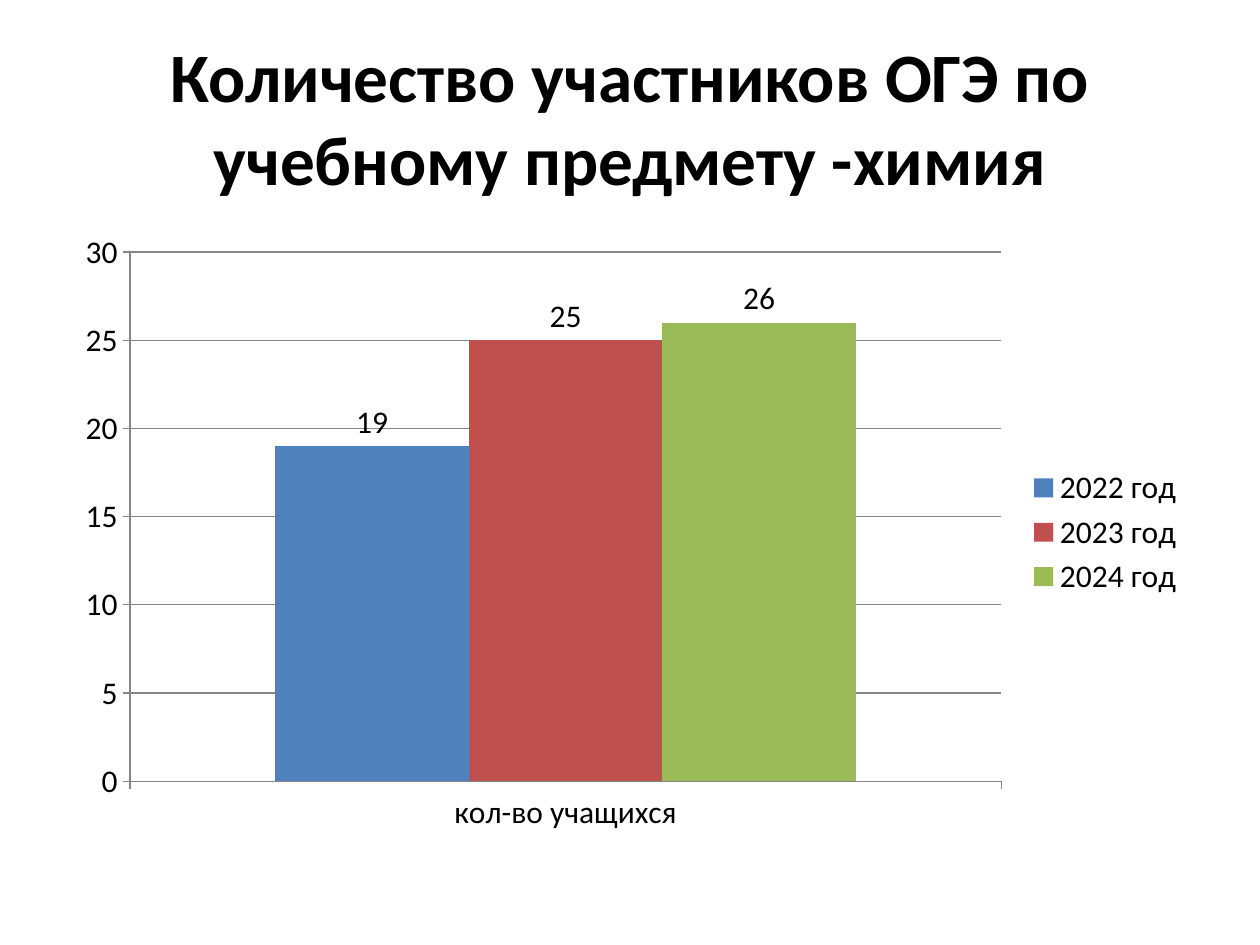
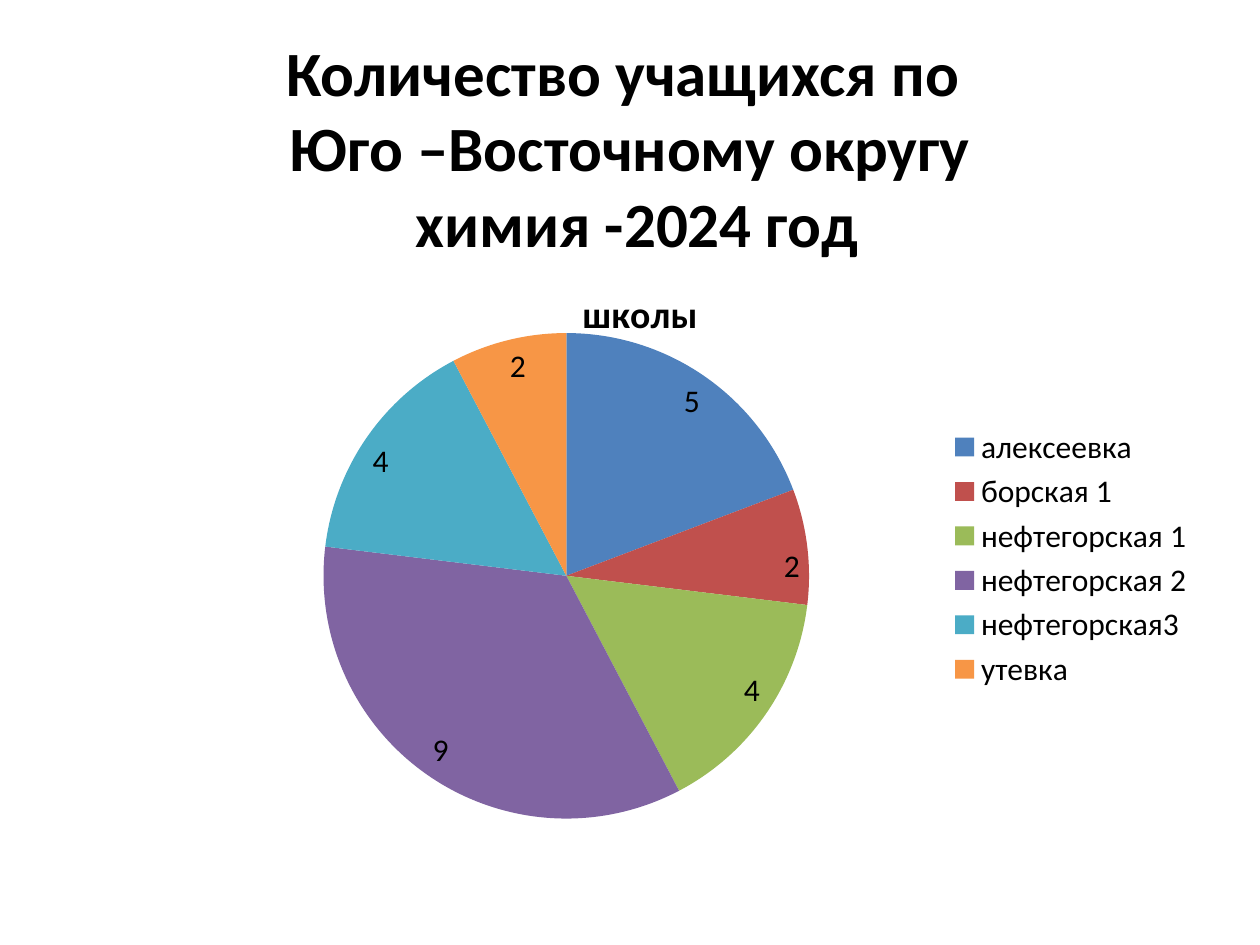
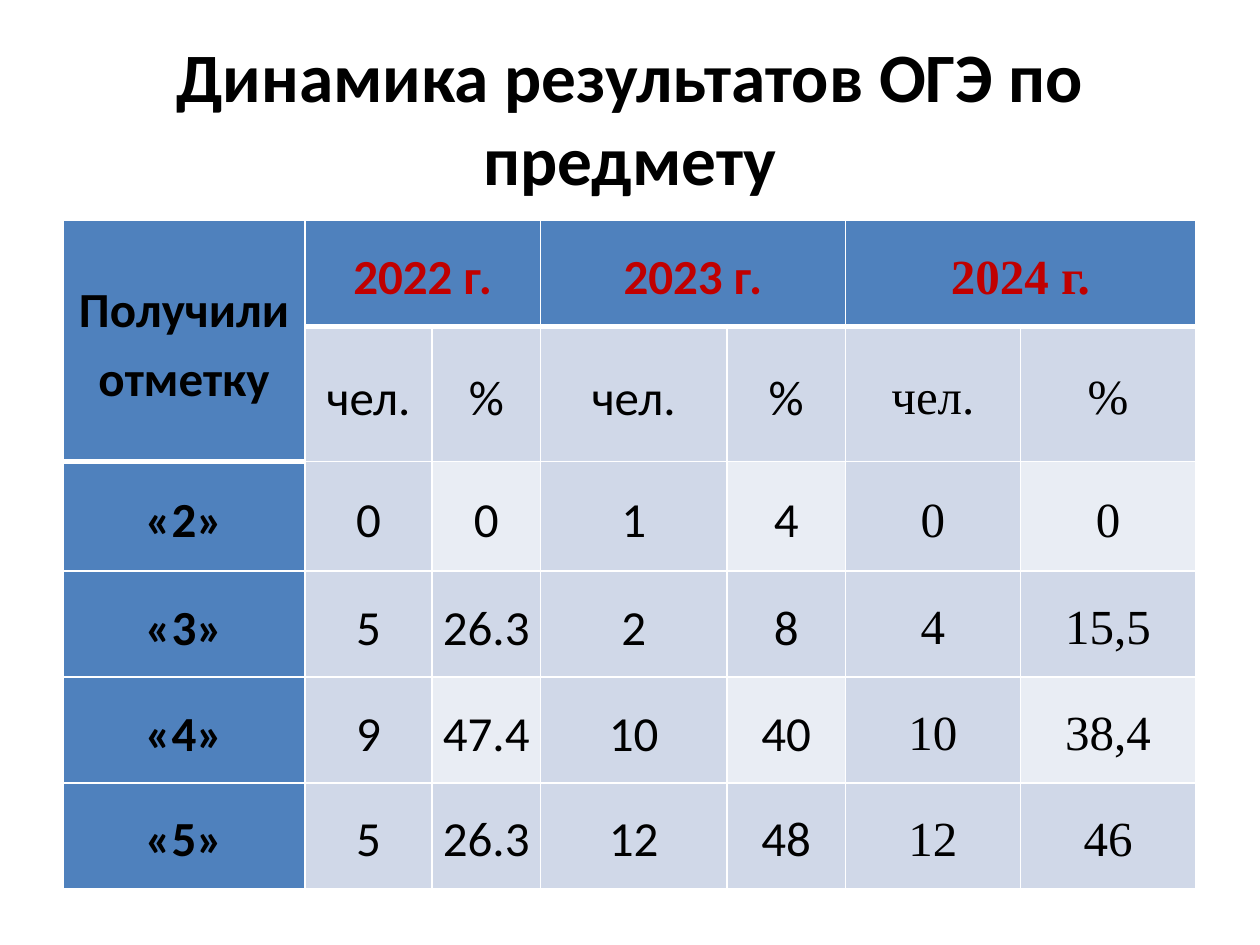
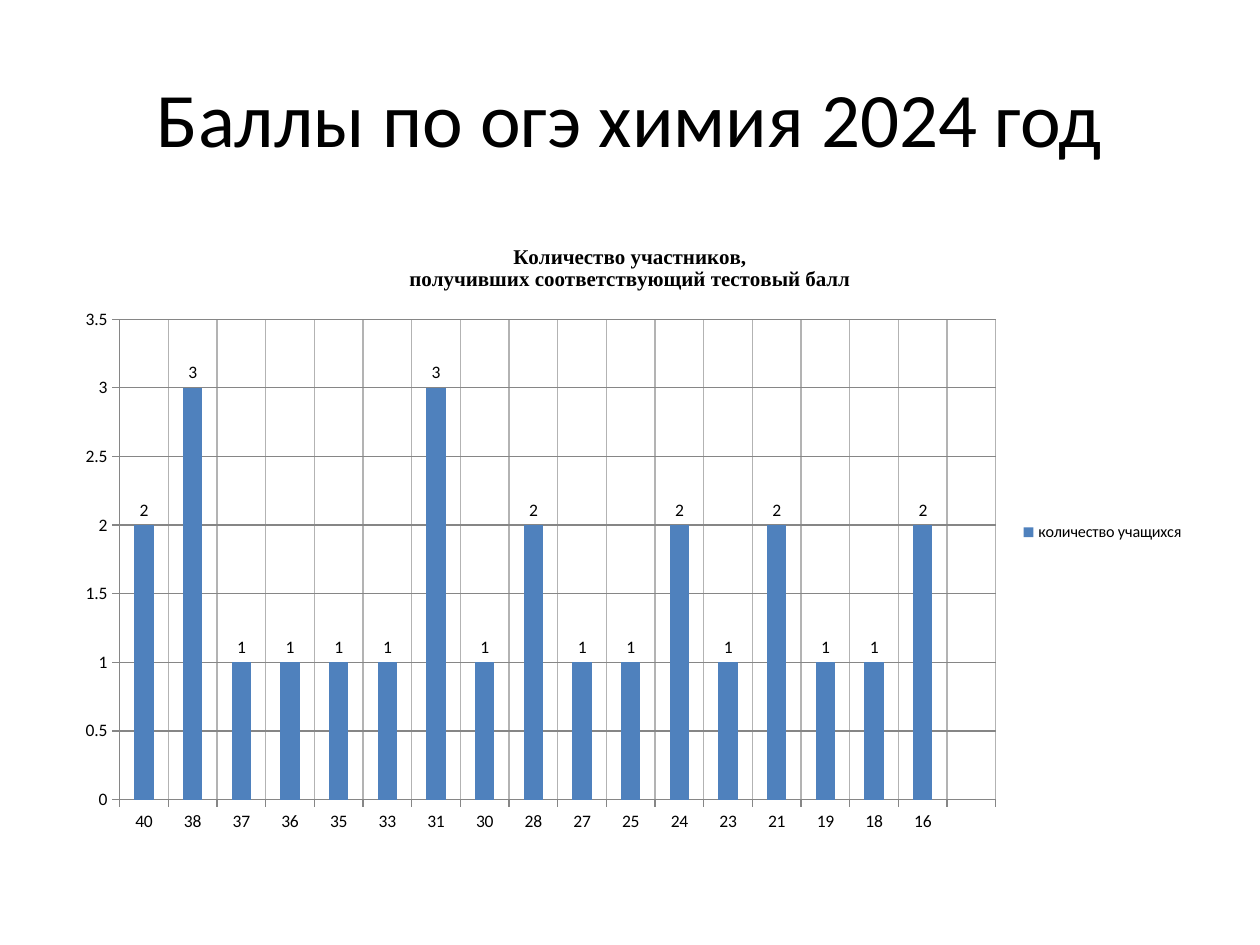
import pptx
import pptx.chart.data
import pptx.dml.color
import pptx.enum.chart
import pptx.enum.text
import pptx.oxml
import pptx.oxml.ns
import pptx.util

THEME = {
    "text": "000000", "year": "C00000", "axis": "868686", "cat_grid": "B3B3B3",
    "header": "4F81BD", "band": "D0D8E8", "light_band": "E9EDF4", "border": "FFFFFF",
    "accents": ["4F81BD", "C0504D", "9BBB59", "8064A2", "4BACC6", "F79646"],
    "body_font": "Calibri", "serif_font": "Times New Roman",
    "title_sizes": [39.6, 36, 39.6, 44],
    "cell_size": 28, "chart_size": 18, "pie_title_size": 21.6,
    "scores_size": 10, "scores_legend_size": 9.2, "scores_title_size": 12,
}
rgb = pptx.dml.color.RGBColor.from_string
XL = pptx.enum.chart

deck = pptx.Presentation()
deck.slide_width, deck.slide_height = pptx.util.Inches(10), pptx.util.Inches(7.5)
COLUMN = deck.slide_width / 40
ROW = deck.slide_height / 30


def grid(left, top, width, height):
    """Turn columns and rows of the slide grid into lengths."""
    return [round(cells * unit) for cells, unit in
            zip((left, top, width, height), (COLUMN, ROW, COLUMN, ROW))]


def style(font, size, bold=False, color=THEME["text"], name=THEME["body_font"]):
    for attribute, value in {"size": pptx.util.Pt(size), "bold": bold, "name": name}.items():
        setattr(font, attribute, value)
    font.color.rgb = rgb(color)


# Slides with their titles
TITLE_AREA = (2, 1.2, 36, 5)
CONTENT_AREA = (2, 7, 36, 19.8)
titles = [
    ("Количество участников ОГЭ по учебному предмету -химия", TITLE_AREA, True),
    ("Количество учащихся по \vЮго –Восточному округу\v химия -2024 год",
     (2, 1, 36, 7.32), True),
    ("Динамика результатов ОГЭ по предмету", TITLE_AREA, True),
    ("Баллы по огэ химия 2024 год", TITLE_AREA, False),
]
slides = []
for (wording, area, bold), size in zip(titles, THEME["title_sizes"]):
    slide = deck.slides.add_slide(deck.slide_layouts[6])
    slides.append(slide)
    heading = slide.shapes.add_textbox(*grid(*area)).text_frame
    heading.word_wrap = True
    heading.vertical_anchor = pptx.enum.text.MSO_ANCHOR.MIDDLE
    line = heading.paragraphs[0]
    line.text = wording
    line.alignment = pptx.enum.text.PP_ALIGN.CENTER
    for run in line.runs:
        style(run.font, size, bold)
participants_slide, schools_slide, results_slide, scores_slide = slides

# Charts
schools = {"алексеевка": 5, "борская 1": 2, "нефтегорская 1": 4,
           "нефтегорская 2": 9, "нефтегорская3": 4, "утевка": 2}
scores = {"40": 2, "38": 3, "37": 1, "36": 1, "35": 1, "33": 1, "31": 3, "30": 1, "28": 2,
          "27": 1, "25": 1, "24": 2, "23": 1, "21": 2, "19": 1, "18": 1, "16": 2, "": None}
chart_specs = [
    {"slide": participants_slide, "area": CONTENT_AREA, "kind": XL.XL_CHART_TYPE.COLUMN_CLUSTERED,
     "categories": ["кол-во учащихся"],
     "series": {"2022 год": [19], "2023 год": [25], "2024 год": [26]},
     "size": THEME["chart_size"], "legend_size": THEME["chart_size"], "title": None,
     "scale": (30, 5)},
    {"slide": schools_slide, "area": (2.32, 8.32, 36, 18.8), "kind": XL.XL_CHART_TYPE.PIE,
     "categories": list(schools), "series": {"школы": list(schools.values())},
     "size": THEME["chart_size"], "legend_size": THEME["chart_size"],
     "title": "школы", "title_size": THEME["pie_title_size"], "title_font": THEME["body_font"]},
    {"slide": scores_slide, "area": CONTENT_AREA, "kind": XL.XL_CHART_TYPE.COLUMN_CLUSTERED,
     "categories": list(scores), "series": {"количество учащихся": list(scores.values())},
     "size": THEME["scores_size"], "legend_size": THEME["scores_legend_size"],
     "title": "Количество участников,\nполучивших соответствующий тестовый балл",
     "title_size": THEME["scores_title_size"], "title_font": THEME["serif_font"],
     "scale": (3.5, 0.5)},
]
for spec in chart_specs:
    numbers = pptx.chart.data.CategoryChartData()
    numbers.categories = spec["categories"]
    for name, values in spec["series"].items():
        numbers.add_series(name, values)
    chart = spec["slide"].shapes.add_chart(spec["kind"], *grid(*spec["area"]), numbers).chart
    style(chart.font, spec["size"])

    chart.has_title = spec["title"] is not None
    if chart.has_title:
        chart.chart_title.text_frame.text = spec["title"]
        for line in chart.chart_title.text_frame.paragraphs:
            for run in line.runs:
                style(run.font, spec["title_size"], True, name=spec["title_font"])

    chart.has_legend = True
    chart.legend.position = XL.XL_LEGEND_POSITION.RIGHT
    chart.legend.include_in_layout = False
    style(chart.legend.font, spec["legend_size"])

    plot = chart.plots[0]
    is_pie = spec["kind"] == XL.XL_CHART_TYPE.PIE
    plot.vary_by_categories = is_pie
    plot.has_data_labels = True
    plot.data_labels.show_value = True
    plot.data_labels.position = (XL.XL_LABEL_POSITION.INSIDE_END if is_pie
                                 else XL.XL_LABEL_POSITION.OUTSIDE_END)
    style(plot.data_labels.font, spec["size"])
    if is_pie:
        colored = [plot.series[0].points[i] for i in range(len(spec["categories"]))]
    else:
        colored = list(plot.series)
    for part, color in zip(colored, THEME["accents"]):
        part.format.fill.solid()
        part.format.fill.fore_color.rgb = rgb(color)
    if is_pie:
        continue

    plot.gap_width, plot.overlap = 150, 0
    chart.value_axis.minimum_scale = 0
    chart.value_axis.maximum_scale, chart.value_axis.major_unit = spec["scale"]
    chart.value_axis.has_major_gridlines = True
    chart.category_axis.has_major_gridlines = spec["slide"] is scores_slide
    for axis, grid_color in ((chart.value_axis, THEME["axis"]),
                             (chart.category_axis, THEME["cat_grid"])):
        axis.major_tick_mark = XL.XL_TICK_MARK.OUTSIDE
        style(axis.tick_labels.font, spec["size"])
        axis.format.line.color.rgb = rgb(THEME["axis"])
        if axis.has_major_gridlines:
            axis.major_gridlines.format.line.color.rgb = rgb(grid_color)

# Fixed place of the pie inside its chart
pie_area = schools_slide.shapes[-1].chart.element.find(".//" + pptx.oxml.ns.qn("c:plotArea"))
for old_layout in pie_area.findall(pptx.oxml.ns.qn("c:layout")):
    pie_area.remove(old_layout)
pie_place = {"layoutTarget": "inner", "xMode": "edge", "yMode": "edge",
             "x": 0.21, "y": 0.12, "w": 0.45, "h": 0.82}
pie_area.insert(0, pptx.oxml.parse_xml(
    f"<c:layout {pptx.oxml.ns.nsdecls('c')}><c:manualLayout>"
    + "".join(f'<c:{key} val="{value}"/>' for key, value in pie_place.items())
    + "</c:manualLayout></c:layout>"))

# Results table
results = [
    ["Получили отметку", "2022 г.", "", "2023 г.", "", "2024 г.", ""],
    ["", "чел.", "%", "чел.", "%", "чел.", "%"],
    ["«2»", "0", "0", "1", "4", "0", "0"],
    ["«3»", "5", "26.3", "2", "8", "4", "15,5"],
    ["«4»", "9", "47.4", "10", "40", "10", "38,4"],
    ["«5»", "5", "26.3", "12", "48", "12", "46"],
]
column_widths = [1.92, 1.01, 0.86, 1.48, 0.94, 1.39, 1.39]
row_heights = [0.84, 0.77, 0.87, 0.84, 0.84, 0.84]
table = results_slide.shapes.add_table(len(row_heights), len(column_widths),
                                       *grid(2, 7, 36, 20)).table
table.horz_banding = False
for column, width in zip(table.columns, column_widths):
    column.width = pptx.util.Inches(width)
for row, height in zip(table.rows, row_heights):
    row.height = pptx.util.Inches(height)
table.cell(0, 0).merge(table.cell(1, 0))
for first in (1, 3, 5):
    table.cell(0, first).merge(table.cell(0, first + 1))

for r, row in enumerate(results):
    for c, wording in enumerate(row):
        cell = table.cell(r, c)
        header_end = 1 if c == 0 else 0
        thick = {"lnT": r == header_end + 1, "lnB": r <= header_end}
        for side in ("lnL", "lnR", "lnT", "lnB"):
            points = 3 if thick.get(side) else 1
            cell._tc.get_or_add_tcPr().append(pptx.oxml.parse_xml(
                f'<a:{side} {pptx.oxml.ns.nsdecls("a")} w="{pptx.util.Pt(points)}"><a:solidFill>'
                f'<a:srgbClr val="{THEME["border"]}"/></a:solidFill></a:{side}>'))
        is_header = r == 0 or c == 0
        is_light = r in (2, 4) and c % 2 == 0
        cell.fill.solid()
        cell.fill.fore_color.rgb = rgb(
            THEME["header" if is_header else "light_band" if is_light else "band"])
        cell.vertical_anchor = pptx.enum.text.MSO_ANCHOR.MIDDLE
        cell.margin_left = cell.margin_right = pptx.util.Inches(0.07)
        cell.margin_top = cell.margin_bottom = 0
        if wording:
            line = cell.text_frame.paragraphs[0]
            line.text = wording
            line.alignment = pptx.enum.text.PP_ALIGN.CENTER
            line.line_spacing = 1.15
            style(line.runs[0].font, THEME["cell_size"], is_header,
                  THEME["year" if r == 0 and c > 0 else "text"],
                  THEME["serif_font" if c >= 5 else "body_font"])

deck.save("out.pptx")
